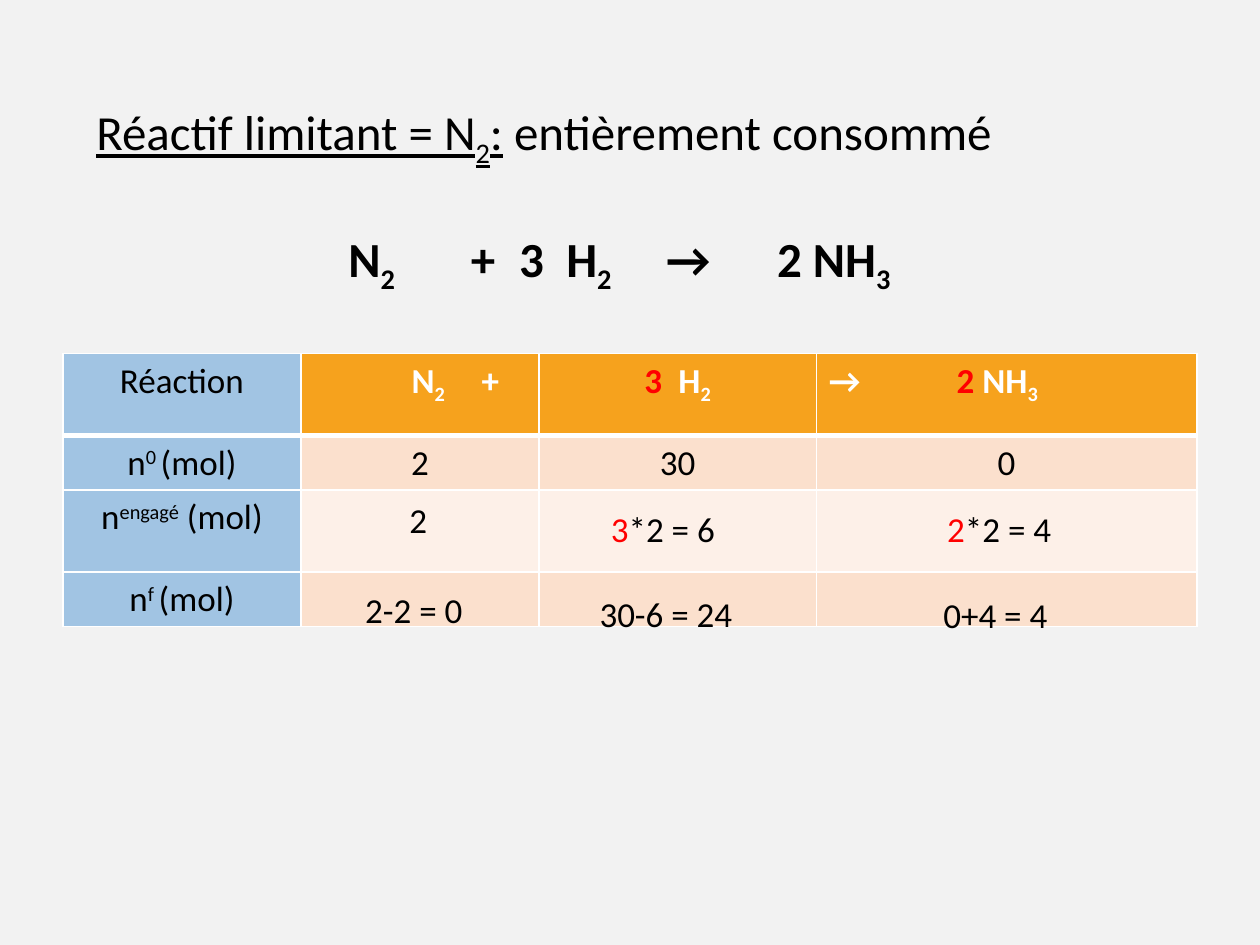
import pptx
import pptx.util
import pptx.dml.color
import pptx.enum.text
from pptx.oxml.ns import qn
from lxml import etree

Pt = pptx.util.Pt
CENTER = pptx.enum.text.PP_ALIGN.CENTER
FONT = "Calibri"
BLACK, WHITE, RED = "000000", "FFFFFF", "FF0000"
BLUE, ORANGE, PEACH, CREAM = "A1C4E3", "F6A21D", "FBE0CD", "FDF0E8"
BASELINES = {"sub": "-25000", "sup": "30000"}

title = [("Réactif limitant = N", "line"), ("2", "line sub"), (":", "line"), (" entièrement consommé", "")]
equation = [("\tN", ""), ("2", "sub"), ("\t+\t3\tH", ""), ("2", "sub"), ("\t→\t2 NH", ""), ("3", "sub")]
equation_tabs = [144, 214, 241.5, 268.5, 325.5, 389]

column_widths = [136, 136, 158.5, 217.5]
row_heights = [46.8, 29.5, 46.8, 29.5]
row_fills = [ORANGE, PEACH, CREAM, PEACH]
header = [
    ([("\tN", ""), ("2", "sub"), ("\t+", "")], [56, 96]),
    ([("\t3", "red"), ("\tH", ""), ("2", "sub")], [53, 72.5]),
    ([("→", ""), ("\t2 ", "red"), ("NH", ""), ("3", "sub")], [73]),
]
row_labels = [
    [("Réaction", "")],
    [("n", ""), ("0 ", "sup"), ("(mol)", "")],
    [("n", ""), ("engagé", "sup"), (" (mol)", "")],
    [("n", ""), ("f ", "sup"), ("(mol)", "")],
]
initial_amounts = ["2", "30", "0"]

results = [
    (226.8, 281.5, 34, [("2", "")]),
    (342, 286.5, 102, [("3", "red"), ("*2 = 6", "")]),
    (534.2, 286.5, 102, [("2", "red"), ("*2 = 4", "")]),
    (201.6, 332.6, 76.5, [("2-2 = 0", "")]),
    (335.5, 334.8, 114.5, [("30-6 = 24", "")]),
    (532, 335.5, 102, [("0+4 = 4", "")]),
]


def color(value):
    return pptx.dml.color.RGBColor.from_string(value)


def paint(fill, value):
    fill.solid()
    fill.fore_color.rgb = color(value)


def write(para, spans, size=20, ink=BLACK, bold=False, tabs=()):
    if tabs:
        stops = etree.SubElement(para._p.get_or_add_pPr(), qn("a:tabLst"))
        for position in tabs:
            etree.SubElement(stops, qn("a:tab"), pos=str(int(Pt(position))), algn="l")
    para.font.name = FONT
    para.font.size = Pt(size)
    para.font.bold = bold
    para.font.color.rgb = color(ink)
    for text, style in spans:
        span = para.add_run()
        span.text = text
        for mark in style.split():
            if mark == "red":
                span.font.color.rgb = color(RED)
            elif mark == "line":
                span.font.underline = True
            else:
                span.font._element.set("baseline", BASELINES[mark])


def add_box(page, left, top, width, height):
    box = page.shapes.add_textbox(Pt(left), Pt(top), Pt(width), Pt(height))
    box.text_frame.word_wrap = True
    return box.text_frame


def add_borders(cell, row):
    widths = {"L": 1, "R": 1, "T": 3 if row == 1 else 1, "B": 3 if row == 0 else 1}
    for side, width in widths.items():
        line = etree.SubElement(cell._tc.get_or_add_tcPr(), qn("a:ln" + side), w=str(int(Pt(width))))
        fill = etree.SubElement(line, qn("a:solidFill"))
        etree.SubElement(fill, qn("a:srgbClr"), val=WHITE)


def add_amounts_table(page):
    frame = page.shapes.add_table(
        len(row_heights), len(column_widths), Pt(36), Pt(202), Pt(sum(column_widths)), Pt(sum(row_heights)))
    table = frame.table
    table.first_row = table.horz_banding = False
    for column, width in zip(table.columns, column_widths):
        column.width = Pt(width)
    for row, height in enumerate(row_heights):
        table.rows[row].height = Pt(height)
        for column in range(len(column_widths)):
            cell = table.cell(row, column)
            add_borders(cell, row)
            paint(cell.fill, row_fills[row] if column else BLUE)
            para = cell.text_frame.paragraphs[0]
            if row == 0 and column:
                spans, tabs = header[column - 1]
                write(para, spans, ink=WHITE, bold=True, tabs=tabs)
                continue
            para.alignment = CENTER
            if column == 0:
                write(para, row_labels[row])
            elif row == 1:
                write(para, [(initial_amounts[column - 1], "")])


def main():
    deck = pptx.Presentation()
    deck.slide_width, deck.slide_height = Pt(720), Pt(540)
    page = deck.slides.add_slide(deck.slide_layouts[6])
    paint(page.background.fill, "F2F2F2")

    heading = add_box(page, 48, 54.7, 629.5, 131)
    write(heading.paragraphs[0], title, size=28)
    para = heading.add_paragraph()
    para.space_before = Pt(34)
    write(para, equation, size=28, bold=True, tabs=equation_tabs)

    add_amounts_table(page)
    for left, top, width, spans in results:
        write(add_box(page, left, top, width, 31.5).paragraphs[0], spans)
    deck.save("out.pptx")


if __name__ == "__main__":
    main()
